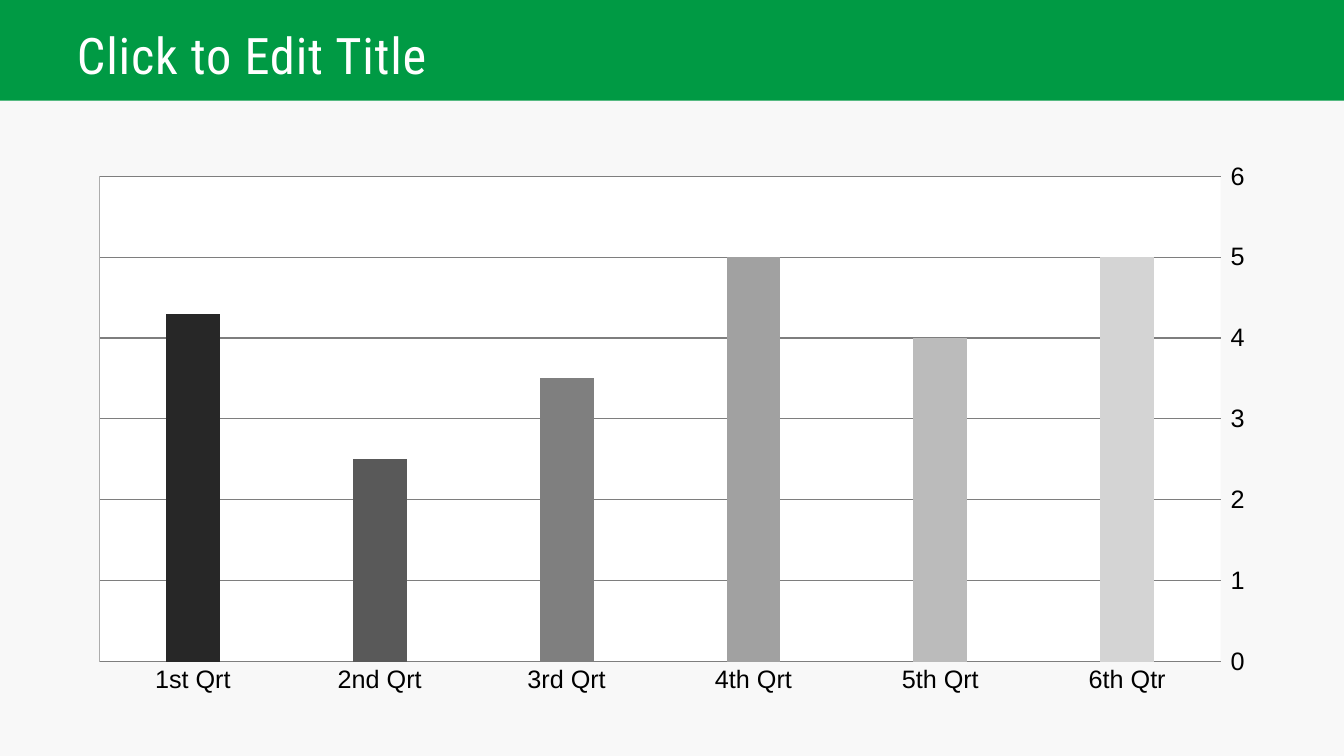
from lxml import etree
from pptx import Presentation
from pptx.chart.data import CategoryChartData
from pptx.dml.color import RGBColor
from pptx.enum.chart import XL_CHART_TYPE, XL_TICK_LABEL_POSITION, XL_TICK_MARK
from pptx.enum.shapes import MSO_SHAPE
from pptx.enum.text import MSO_ANCHOR, MSO_AUTO_SIZE, PP_ALIGN
from pptx.oxml import parse_xml
from pptx.oxml.ns import nsdecls, qn
from pptx.util import Pt

COLUMNS = XL_CHART_TYPE.COLUMN_CLUSTERED
LABELS_HIGH = XL_TICK_LABEL_POSITION.HIGH
NO_TICKS = XL_TICK_MARK.NONE
RECTANGLE = MSO_SHAPE.RECTANGLE
MIDDLE = MSO_ANCHOR.MIDDLE
NO_AUTOFIT = MSO_AUTO_SIZE.NONE
LEFT = PP_ALIGN.LEFT

WIDTH, HEIGHT = 960, 540
GREEN, GRID = "009A44", "7E7E7E"
QUARTERS = [
    ("1st Qrt", 4.3, "272727"),
    ("2nd Qrt", 2.5, "595959"),
    ("3rd Qrt", 3.5, "7F7F7F"),
    ("4th Qrt", 5, "A1A1A1"),
    ("5th Qrt", 4, "BBBBBB"),
    ("6th Qtr", 5, "D4D4D4"),
]


def rgb(value):
    return RGBColor.from_string(value)


def paint(fill, color):
    fill.solid()
    fill.fore_color.rgb = rgb(color)


def set_font(font, name, size, color):
    font.name, font.size = name, Pt(size)
    font.color.rgb = rgb(color)


def add_header(s, text, x, y, w, h):
    # Green band, placed behind the title
    band = s.shapes.add_shape(RECTANGLE, Pt(x), Pt(y), Pt(w), Pt(h))
    band.shadow.inherit = False
    paint(band.fill, GREEN)
    band.line.fill.background()

    # Title
    title = s.shapes.title
    title._element.addprevious(band._element)
    title.left, title.top = Pt(x + 55), Pt(y)
    title.width, title.height = Pt(720), Pt(h)
    tf = title.text_frame
    tf.text = text
    tf.word_wrap = True
    tf.auto_size = NO_AUTOFIT
    tf.vertical_anchor = MIDDLE
    tf.margin_left = tf.margin_right = tf.margin_bottom = 0
    tf.margin_top = Pt(10.8)
    p = tf.paragraphs[0]
    p.alignment = LEFT
    p.line_spacing = 0.9
    r = p.runs[0]
    set_font(r.font, "Roboto Condensed", 36, "FFFFFF")
    r.font._element.set("spc", "60")


def style_axis(axis, line_color):
    axis.major_tick_mark = axis.minor_tick_mark = NO_TICKS
    set_font(axis.tick_labels.font, "Arial", 18, "000000")
    axis.format.line.color.rgb = rgb(line_color)
    axis.format.line.width = Pt(0.75)


def style_plot_area(plot_area, x, y, w, h):
    # Inner plot position, as fractions of the chart
    layout = plot_area.find(qn("c:layout"))
    if layout is not None:
        plot_area.remove(layout)
    layout = etree.Element(qn("c:layout"))
    manual = etree.SubElement(layout, qn("c:manualLayout"))
    settings = [("layoutTarget", "inner"), ("xMode", "edge"), ("yMode", "edge"),
                ("x", x), ("y", y), ("w", w), ("h", h)]
    for tag, value in settings:
        etree.SubElement(manual, qn("c:" + tag)).set("val", str(value))
    plot_area.insert(0, layout)

    # White background
    plot_area.append(parse_xml(
        f'<c:spPr {nsdecls("c", "a")}><a:solidFill><a:srgbClr val="FFFFFF"/>'
        '</a:solidFill><a:ln><a:noFill/></a:ln></c:spPr>'))


def add_quarter_chart(s, x, y, w, h):
    names, values, colors = zip(*QUARTERS)
    data = CategoryChartData()
    data.categories = names
    data.add_series("Series 1", values)
    chart = s.shapes.add_chart(COLUMNS, Pt(x), Pt(y), Pt(w), Pt(h), data).chart
    chart.has_title = chart.has_legend = False
    set_font(chart.font, "Arial", 10, "000000")

    # Axes and gridlines
    style_axis(chart.category_axis, GRID)
    axis = chart.value_axis
    style_axis(axis, "ADADAD")
    axis.tick_label_position = LABELS_HIGH
    axis.minimum_scale, axis.maximum_scale, axis.major_unit = 0, 6, 1
    axis.has_major_gridlines = True
    grid = axis.major_gridlines.format.line
    grid.color.rgb = rgb(GRID)
    grid.width = Pt(0.75)

    # Columns, one grey per quarter
    plot = chart.plots[0]
    plot.vary_by_categories = False
    plot.gap_width, plot.overlap = 247, -24
    series = plot.series[0]
    paint(series.format.fill, GREEN)
    for i, color in enumerate(colors):
        paint(series.points[i].format.fill, color)

    style_plot_area(chart._chartSpace.chart.plotArea, 0.02, 0.045, 0.94, 0.876)


def main():
    prs = Presentation()
    prs.slide_width, prs.slide_height = Pt(WIDTH), Pt(HEIGHT)
    s = prs.slides.add_slide(prs.slide_layouts[5])
    paint(s.background.fill, "F8F8F8")
    add_header(s, "Click to Edit Title", 0, 0, WIDTH, 72)
    add_quarter_chart(s, 54, 108, WIDTH - 2 * 54, 396)
    prs.save("out.pptx")


if __name__ == "__main__":
    main()
